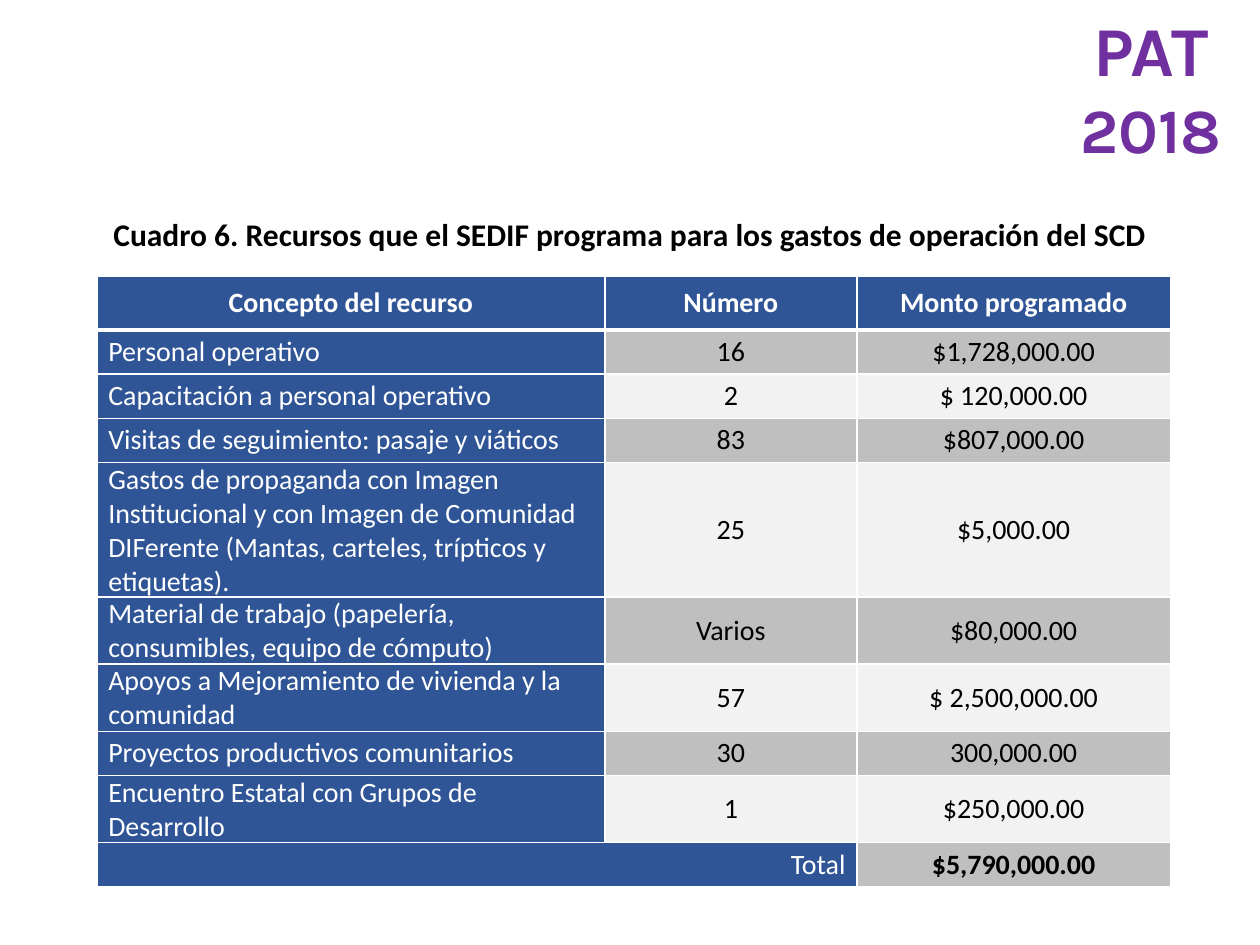
import pptx
import pptx.dml.color
import pptx.enum.text
import pptx.oxml
import pptx.oxml.ns
import pptx.util
from pptx.util import Inches

RGBColor = pptx.dml.color.RGBColor
ALIGN = pptx.enum.text.PP_ALIGN
MIDDLE = pptx.enum.text.MSO_ANCHOR.MIDDLE

PURPLE = RGBColor(0x70, 0x30, 0xA0)
BLUE = RGBColor(0x2F, 0x55, 0x97)
GRAY = RGBColor(0xBF, 0xBF, 0xBF)
LIGHT_GRAY = RGBColor(0xF2, 0xF2, 0xF2)
WHITE = RGBColor(0xFF, 0xFF, 0xFF)
BLACK = RGBColor(0x00, 0x00, 0x00)

TEXT_BOXES = [
    ((8.27, 0, 1.73, 1.38), "Karla", PURPLE, [("PAT", 40), (" 2018", 36)]),
    ((0.61, 1.66, 8.78, 0.4), "Calibri", BLACK,
     [("Cuadro 6. Recursos que el SEDIF programa para los gastos de operación del SCD", 18)]),
]
COLUMN_WIDTHS = [4.03, 2, 2.49]
ROWS = [
    (0.43, "Concepto del recurso", "Número", "Monto programado"),
    (0.35, "Personal operativo", "16", "$1,728,000.00"),
    (0.35, "Capacitación a personal operativo", "2", "$ 120,000.00"),
    (0.35, "Visitas de seguimiento: pasaje y viáticos", "83", "$807,000.00"),
    (0.55, "Gastos de propaganda con Imagen Institucional y con Imagen de Comunidad "
           "DIFerente (Mantas, carteles, trípticos y etiquetas).", "25", "$5,000.00"),
    (0.41, "Material de trabajo (papelería, consumibles, equipo de cómputo)",
     "Varios", "$80,000.00"),
    (0.39, "Apoyos a Mejoramiento de vivienda y la comunidad", "57", "$ 2,500,000.00"),
    (0.35, "Proyectos productivos comunitarios", "30", "300,000.00"),
    (0.39, "Encuentro Estatal con Grupos de Desarrollo", "1", "$250,000.00"),
    (0.35, "Total", "", "$5,790,000.00"),
]


def add_span(para, text, color, **font_values):
    span = para.add_run()
    span.text = text
    span.font.color.rgb = color
    for name, value in font_values.items():
        setattr(span.font, name, value)


def add_borders(cell, top, bottom):
    """Draw white cell borders, with the top and bottom widths in points."""
    properties = cell._tc.get_or_add_tcPr()
    for side, width in {"L": 1, "R": 1, "T": top, "B": bottom}.items():
        properties.append(pptx.oxml.parse_xml(
            f'<a:ln{side} {pptx.oxml.ns.nsdecls("a")} w="{pptx.util.Pt(width)}">'
            f'<a:solidFill><a:srgbClr val="{WHITE}"/></a:solidFill></a:ln{side}>'))


deck = pptx.Presentation()
deck.slide_width = Inches(10)
deck.slide_height = Inches(7.5)
slide = deck.slides.add_slide(deck.slide_layouts[6])

for place, font_name, color, spans in TEXT_BOXES:
    box = slide.shapes.add_textbox(*map(Inches, place))
    box.text_frame.word_wrap = True
    box.text_frame.auto_size = pptx.enum.text.MSO_AUTO_SIZE.SHAPE_TO_FIT_TEXT
    para = box.text_frame.paragraphs[0]
    para.alignment = ALIGN.CENTER
    for text, size in spans:
        add_span(para, text, color, name=font_name, size=pptx.util.Pt(size), bold=True)

frame = slide.shapes.add_table(
    len(ROWS), len(COLUMN_WIDTHS), Inches(0.77), Inches(2.19),
    Inches(sum(COLUMN_WIDTHS)), Inches(sum(row[0] for row in ROWS)))
table = frame.table
for column, width in zip(table.columns, COLUMN_WIDTHS):
    column.width = Inches(width)

last_row = len(ROWS) - 1
table.cell(last_row, 0).merge(table.cell(last_row, 1))
cell_format = {
    "vertical_anchor": MIDDLE,
    "margin_left": Inches(0.09), "margin_right": Inches(0.09),
    "margin_top": 0, "margin_bottom": 0,
}
for row_index, (height, *texts) in enumerate(ROWS):
    table.rows[row_index].height = Inches(height)
    for column_index, text in enumerate(texts):
        cell = table.cell(row_index, column_index)
        for name, value in cell_format.items():
            setattr(cell, name, value)
        add_borders(cell, top=3 if row_index == 1 else 1, bottom=3 if row_index == 0 else 1)

        is_header = row_index == 0
        is_label = column_index == 0
        on_blue = is_header or is_label
        cell.fill.solid()
        cell.fill.fore_color.rgb = BLUE if on_blue else GRAY if row_index % 2 else LIGHT_GRAY
        if cell.is_spanned:
            continue
        para = cell.text_frame.paragraphs[0]
        if is_header or not is_label:
            para.alignment = ALIGN.CENTER
        else:
            para.alignment = ALIGN.RIGHT if row_index == last_row else ALIGN.LEFT
        add_span(para, text, WHITE if on_blue else BLACK, name="Calibri",
                 size=pptx.util.Pt(16),
                 bold=is_header or (row_index == last_row and not is_label))

deck.save("out.pptx")
